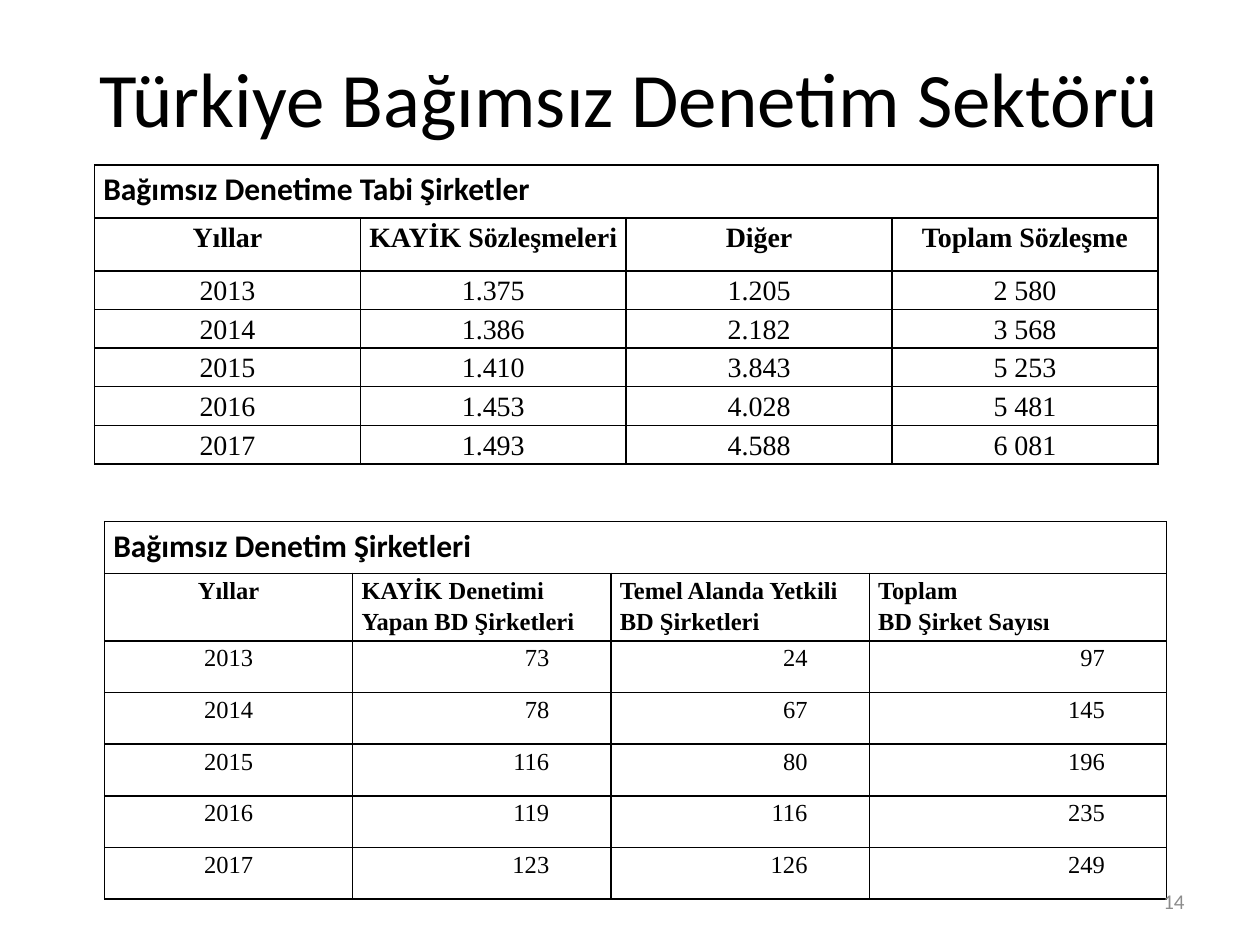
from lxml.etree import SubElement
from pptx import Presentation
from pptx.dml.color import RGBColor
from pptx.enum.text import MSO_ANCHOR, PP_ALIGN
from pptx.oxml.ns import qn
from pptx.util import Inches, Pt

COLORS = {"text": "000000", "border": "000000", "number": "8C8C8C"}
HEADING, BODY = "Calibri", "Times New Roman"
LEFT, CENTER, RIGHT = PP_ALIGN.LEFT, PP_ALIGN.CENTER, PP_ALIGN.RIGHT

CONTRACTS = [
    ["Yıllar", "KAYİK Sözleşmeleri", "Diğer", "Toplam Sözleşme"],
    ["2013", "1.375", "1.205", "2 580"],
    ["2014", "1.386", "2.182", "3 568"],
    ["2015", "1.410", "3.843", "5 253"],
    ["2016", "1.453", "4.028", "5 481"],
    ["2017", "1.493", "4.588", "6 081"],
]
FIRMS = [
    ["Yıllar", "KAYİK Denetimi Yapan BD Şirketleri",
     "Temel Alanda Yetkili BD Şirketleri", "Toplam\nBD Şirket Sayısı"],
    ["2013", "73", "24", "97"],
    ["2014", "78", "67", "145"],
    ["2015", "116", "80", "196"],
    ["2016", "119", "116", "235"],
    ["2017", "123", "126", "249"],
]


class SlideBuilder:
    def __init__(self, slide):
        self.slide = slide

    def set_text(self, tf, text, size, font, align, color="text", bold=False, spacing=1.0):
        tf.word_wrap = True
        tf.text = text
        style = {"size": Pt(size), "name": font, "bold": bold}
        for p in tf.paragraphs:
            p.alignment = align
            p.line_spacing = spacing
            for r in p.runs:
                for key, value in style.items():
                    setattr(r.font, key, value)
                r.font.color.rgb = RGBColor.from_string(COLORS[color])

    def text(self, text, box, size, align, color="text"):
        sp = self.slide.shapes.add_textbox(*map(Inches, box))
        sp.text_frame.vertical_anchor = MSO_ANCHOR.MIDDLE
        self.set_text(sp.text_frame, text, size, HEADING, align, color)

    def cell(self, cell, right=0.07):
        """Give a cell its margins, a border on all sides and no fill."""
        margins = {"left": 0.07, "right": right, "top": 0, "bottom": 0}
        for side, value in margins.items():
            setattr(cell, f"margin_{side}", Inches(value))
        tc_pr = cell._tc.get_or_add_tcPr()
        for side in "LRTB":
            ln = SubElement(tc_pr, qn(f"a:ln{side}"), w=str(Pt(1)))
            fill = SubElement(ln, qn("a:solidFill"))
            SubElement(fill, qn("a:srgbClr"), val=COLORS["border"])
        cell.fill.background()

    def table(self, title, rows, at, widths, heights, size, head_align, value_align, indent):
        """Add a table with a merged title row; indent is the right margin of values."""
        box = (*at, sum(widths), sum(heights))
        frame = self.slide.shapes.add_table(len(heights), len(widths), *map(Inches, box))
        table = frame.table
        table.first_row = table.horz_banding = False
        for column, width in zip(table.columns, widths):
            column.width = Inches(width)
        for row, height in zip(table.rows, heights):
            row.height = Inches(height)

        for cell in table.rows[0].cells:
            self.cell(cell)
        table.cell(0, 0).merge(table.cell(0, len(widths) - 1))
        self.set_text(table.cell(0, 0).text_frame, title, 18, HEADING, LEFT,
                      bold=True, spacing=1.15)
        for i, values in enumerate(rows, 1):
            head = i == 1
            for j, value in enumerate(values):
                cell = table.cell(i, j)
                self.cell(cell, 0.07 if head or j == 0 else indent)
                align = CENTER if j == 0 else head_align if head else value_align
                self.set_text(cell.text_frame, value, size, BODY, align,
                              bold=head, spacing=1.15)


def main():
    prs = Presentation()
    prs.slide_width, prs.slide_height = Inches(10), Inches(7.5)
    s = SlideBuilder(prs.slides.add_slide(prs.slide_layouts[6]))
    s.text("Türkiye Bağımsız Denetim Sektörü", (0.5, 0.3, 9, 0.93), 44, CENTER)
    s.table("Bağımsız Denetime Tabi Şirketler", CONTRACTS, (0.75, 1.31),
            [2.11] * 4, [0.42] * 2 + [0.28] * 5, 16, CENTER, CENTER, 0.07)
    s.table("Bağımsız Denetim Şirketleri", FIRMS, (0.83, 4.14),
            [1.97, 2.05, 2.05, 2.36], [0.41] * 7, 14, LEFT, RIGHT, 0.49)
    s.text("14", (7.17, 6.95, 2.33, 0.4), 12, RIGHT, "number")
    prs.save("out.pptx")


if __name__ == "__main__":
    main()
